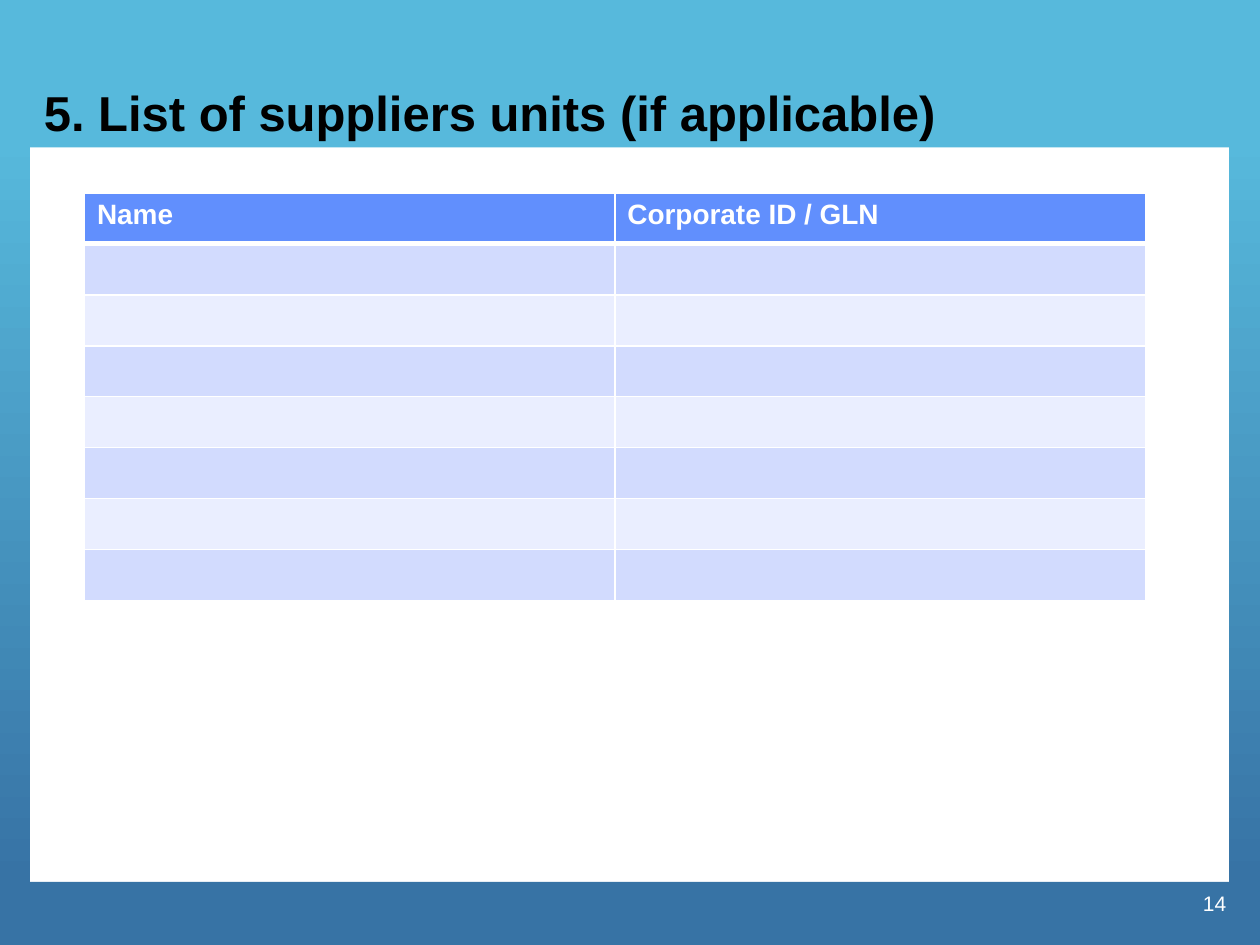
"""Build a slide with an empty two-column table for listing supplier units."""
from lxml import etree
from pptx import Presentation
from pptx.dml.color import RGBColor
from pptx.enum.shapes import MSO_SHAPE
from pptx.enum.text import MSO_ANCHOR, PP_ALIGN
from pptx.oxml.ns import qn
from pptx.util import Inches, Pt

RECTANGLE = MSO_SHAPE.RECTANGLE
LEFT, RIGHT = PP_ALIGN.LEFT, PP_ALIGN.RIGHT
MIDDLE, BOTTOM = MSO_ANCHOR.MIDDLE, MSO_ANCHOR.BOTTOM

COLORS = {
    "sky": "57B9DC", "deep": "3773A5", "white": "FFFFFF", "black": "000000",
    "header": "618FFD", "odd": "D2DBFE", "even": "EAEEFF",
}
FONT = "Arial"
TITLE = "5. List of suppliers units (if applicable)"
PAGE_NUMBER = "14"
HEADINGS = ["Name", "Corporate ID / GLN"]
EMPTY_ROWS = 7

FRAME = [
    ((-0.01, 1.08, 0.25, 5.92), ("sky", "deep")),
    ((0, 7, 10, 0.5), ("deep",)),
    ((0, 0, 10, 1.17), ("sky",)),
    ((9.75, 1.08, 0.25, 5.92), ("sky", "deep")),
]
LABELS = [
    (PAGE_NUMBER, (7.75, 6.92, 2.08, 0.5), 12, "white", False, RIGHT, MIDDLE),
    (TITLE, (0.25, 0.42, 9.5, 0.75), 28, "black", True, LEFT, BOTTOM),
]
TABLE_BOX = (0.67, 1.53, 8.42, 3.24)


def rgb(name):
    return RGBColor.from_string(COLORS[name])


def inches(box):
    return [Inches(length) for length in box]


def style_text(frame, text, size, color, bold, align):
    frame.text = text
    paragraph = frame.paragraphs[0]
    paragraph.alignment = align
    font = paragraph.runs[0].font
    font.name, font.size, font.bold = FONT, Pt(size), bold
    font.color.rgb = rgb(color)


def add_band(slide, box, shades):
    band = slide.shapes.add_shape(RECTANGLE, *inches(box))
    band.shadow.inherit = False
    band.line.fill.background()
    if len(shades) == 1:
        band.fill.solid()
        band.fill.fore_color.rgb = rgb(shades[0])
        return
    band.fill.gradient()
    band.fill.gradient_angle = 270
    for stop, shade, position in zip(band.fill.gradient_stops, shades, (0, 1)):
        stop.color.rgb = rgb(shade)
        stop.position = position


def add_label(slide, text, box, size, color, bold, align, anchor):
    frame = slide.shapes.add_textbox(*inches(box)).text_frame
    frame.word_wrap = True
    frame.vertical_anchor = anchor
    style_text(frame, text, size, color, bold, align)


def style_cell(cell, shade, bottom_width):
    properties = cell._tc.get_or_add_tcPr()
    for side, width in (("L", 1), ("R", 1), ("T", 1), ("B", bottom_width)):
        line = etree.SubElement(properties, qn(f"a:ln{side}"), w=str(Pt(width)))
        fill = etree.SubElement(line, qn("a:solidFill"))
        etree.SubElement(fill, qn("a:srgbClr"), val=COLORS["white"])
    cell.fill.solid()
    cell.fill.fore_color.rgb = rgb(shade)


def add_supplier_table(slide):
    row_count = EMPTY_ROWS + 1
    suppliers = slide.shapes.add_table(
        row_count, len(HEADINGS), *inches(TABLE_BOX)).table
    for row_index in range(row_count):
        is_header = row_index == 0
        shade = "header" if is_header else ("even", "odd")[row_index % 2]
        for column_index, heading in enumerate(HEADINGS):
            cell = suppliers.cell(row_index, column_index)
            style_cell(cell, shade, 3 if is_header else 1)
            if is_header:
                style_text(cell.text_frame, heading, 16, "white", True, LEFT)


def main():
    presentation = Presentation()
    presentation.slide_width, presentation.slide_height = Inches(10), Inches(7.5)
    slide = presentation.slides.add_slide(presentation.slide_layouts[6])
    slide.background.fill.solid()
    slide.background.fill.fore_color.rgb = rgb("white")
    for box, shades in FRAME:
        add_band(slide, box, shades)
    for label in LABELS:
        add_label(slide, *label)
    add_supplier_table(slide)
    presentation.save("out.pptx")


if __name__ == "__main__":
    main()
